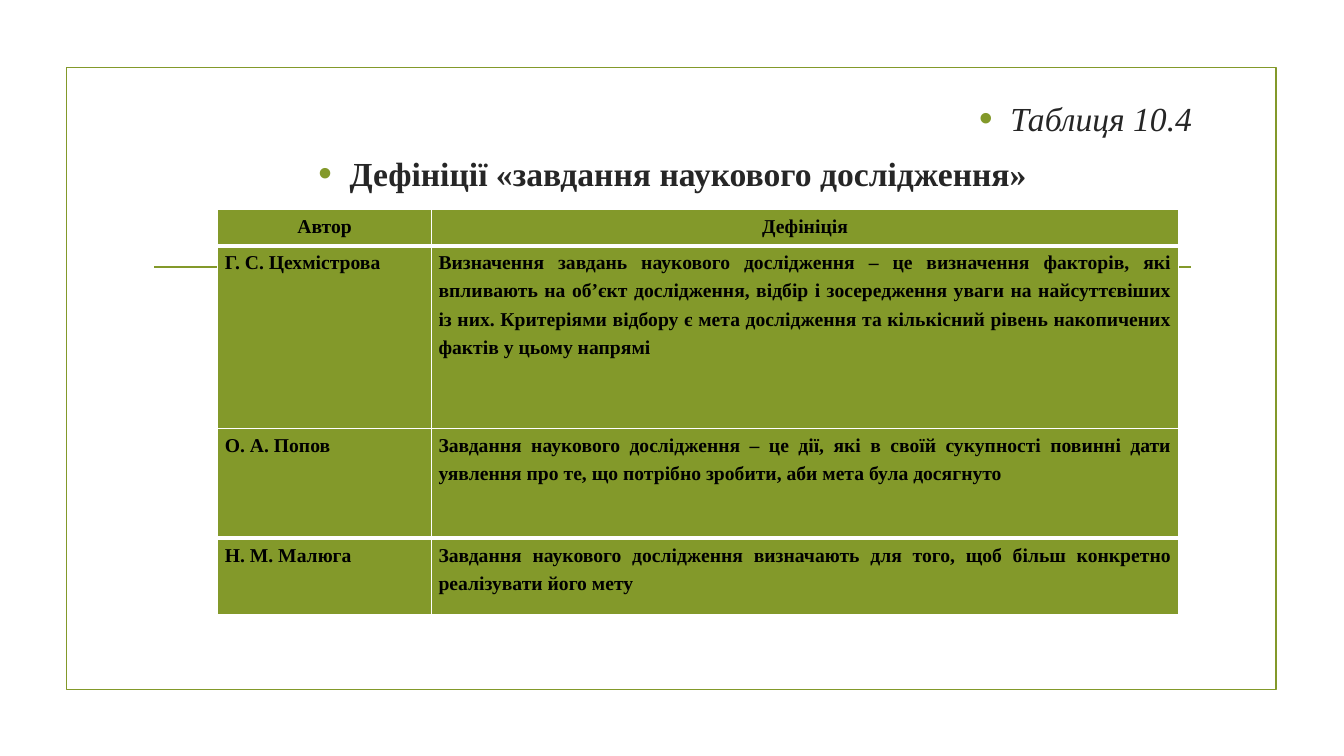
"""Build a slide with a table of definitions of research tasks."""
from lxml import etree
from pptx import Presentation
from pptx.dml.color import RGBColor
from pptx.enum.shapes import MSO_CONNECTOR, MSO_SHAPE
from pptx.enum.text import PP_ALIGN
from pptx.oxml.ns import qn
from pptx.util import Inches, Pt

LEFT, CENTER = PP_ALIGN.LEFT, PP_ALIGN.CENTER
RIGHT, JUSTIFY = PP_ALIGN.RIGHT, PP_ALIGN.JUSTIFY
RECT, STRAIGHT = MSO_SHAPE.RECTANGLE, MSO_CONNECTOR.STRAIGHT

FONT = "Times New Roman"
COLORS = {"olive": "83992A", "heading": "262626", "cell": "000000", "grid": "FFFFFF"}

HEADINGS = [
    {"text": "Таблиця 10.4", "align": RIGHT, "bold": False, "before": 0},
    {"text": "Дефініції «завдання наукового дослідження»", "align": CENTER,
     "bold": True, "before": 4.8},
]
ROWS = [
    ("Автор", "Дефініція"),
    ("Г. С. Цехмістрова",
     "Визначення завдань наукового дослідження – це визначення факторів, які "
     "впливають на об’єкт дослідження, відбір і зосередження уваги на "
     "найсуттєвіших із них. Критеріями відбору є мета дослідження та кількісний "
     "рівень накопичених фактів у цьому напрямі"),
    ("О. А. Попов",
     "Завдання наукового дослідження – це дії, які в своїй сукупності повинні "
     "дати уявлення про те, що потрібно зробити, аби мета була досягнуто"),
    ("Н. М. Малюга",
     "Завдання наукового дослідження визначають для того, щоб більш конкретно "
     "реалізувати його мету"),
]
COL_WIDTHS = [2.12, 7.41]
ROW_HEIGHTS = [0.36, 1.81, 1.09, 0.76]
RULE_WIDTHS = [1, 3, 1, 3, 1]

SLIDE_W, SLIDE_H = 13.33, 7.5
FRAME = (0.66, 0.67, 12, 6.17)
RULE = (1.53, 2.65, 11.81, 2.65)
HEADING_BOX = (1.42, 0.92, 10.5, 1.1)
TABLE_BOX = (2.16, 2.08, sum(COL_WIDTHS), sum(ROW_HEIGHTS))


def rgb(name):
    return RGBColor.from_string(COLORS[name])


def inches(box):
    return [Inches(v) for v in box]


def add_run(p, text, size, color, bold=False, italic=False):
    r = p.add_run()
    r.text = text
    r.font.name, r.font.size = FONT, Pt(size)
    r.font.bold, r.font.italic = bold, italic
    r.font.color.rgb = rgb(color)


def add_bullet(p):
    pPr = p._p.get_or_add_pPr()
    pPr.set("marL", str(Inches(0.31)))
    pPr.set("indent", str(-Inches(0.31)))
    clr = etree.SubElement(pPr, qn("a:buClr"))
    etree.SubElement(clr, qn("a:srgbClr"), val=COLORS["olive"])
    etree.SubElement(pPr, qn("a:buSzPct"), val="115000")
    etree.SubElement(pPr, qn("a:buFont"), typeface="Arial")
    etree.SubElement(pPr, qn("a:buChar"), char="•")


def add_borders(cell, top, bottom):
    tcPr = cell._tc.get_or_add_tcPr()
    for side, width in (("L", 1), ("R", 1), ("T", top), ("B", bottom)):
        ln = etree.SubElement(tcPr, qn(f"a:ln{side}"), w=str(Pt(width)))
        fill = etree.SubElement(ln, qn("a:solidFill"))
        etree.SubElement(fill, qn("a:srgbClr"), val=COLORS["grid"])


def add_backdrop(slide):
    sp = slide.shapes.add_shape(RECT, *inches(FRAME))
    sp.shadow.inherit = False
    sp.fill.background()
    rule = slide.shapes.add_connector(STRAIGHT, *inches(RULE))
    etree.SubElement(rule._element.spPr, qn("a:effectLst"))
    for s in (sp, rule):
        s.line.color.rgb = rgb("olive")
        s.line.width = Pt(1.25)
    etree_order = rule._element.spPr
    etree_order.append(etree_order.find(qn("a:effectLst")))


def add_headings(slide):
    tf = slide.shapes.add_textbox(*inches(HEADING_BOX)).text_frame
    tf.word_wrap = True
    for i, item in enumerate(HEADINGS):
        p = tf.add_paragraph() if i else tf.paragraphs[0]
        add_bullet(p)
        p.alignment = item["align"]
        p.space_before, p.space_after = Pt(item["before"]), Pt(6)
        add_run(p, item["text"], 24, "heading", item["bold"], not item["bold"])


def add_definitions(slide):
    table = slide.shapes.add_table(
        len(ROWS), len(COL_WIDTHS), *inches(TABLE_BOX)).table
    for col, width in zip(table.columns, COL_WIDTHS):
        col.width = Inches(width)
    for i, (row, height) in enumerate(zip(table.rows, ROW_HEIGHTS)):
        row.height = Inches(height)
        for j, cell in enumerate(row.cells):
            add_borders(cell, RULE_WIDTHS[i], RULE_WIDTHS[i + 1])
            cell.fill.solid()
            cell.fill.fore_color.rgb = rgb("olive")
            cell.margin_left = cell.margin_right = Inches(0.07)
            cell.margin_top = cell.margin_bottom = 0
            p = cell.text_frame.paragraphs[0]
            p.alignment = (LEFT, JUSTIFY)[j] if i else CENTER
            p.line_spacing = 1.3
            add_run(p, ROWS[i][j], 14, "cell", bold=True)


def main():
    prs = Presentation()
    prs.slide_width, prs.slide_height = inches((SLIDE_W, SLIDE_H))
    slide = prs.slides.add_slide(prs.slide_layouts[6])
    add_backdrop(slide)
    add_headings(slide)
    add_definitions(slide)
    prs.save("out.pptx")


if __name__ == "__main__":
    main()
